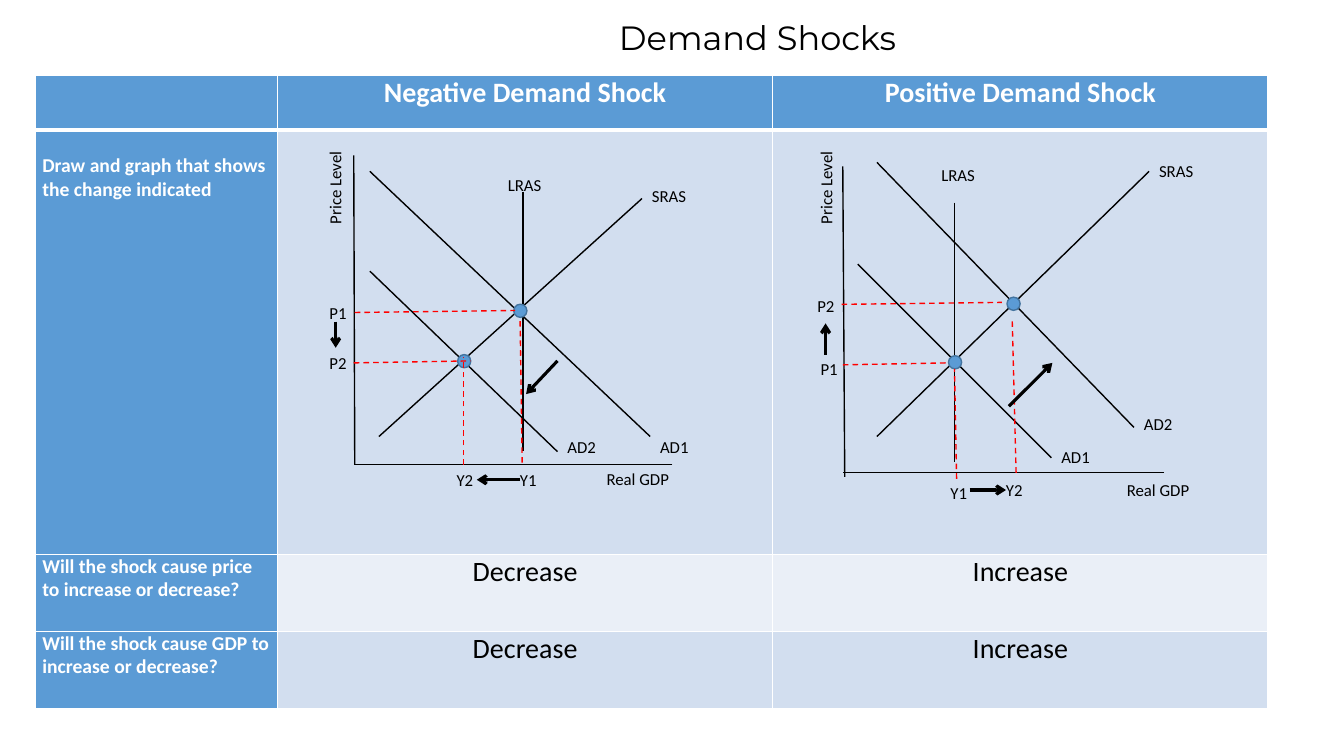
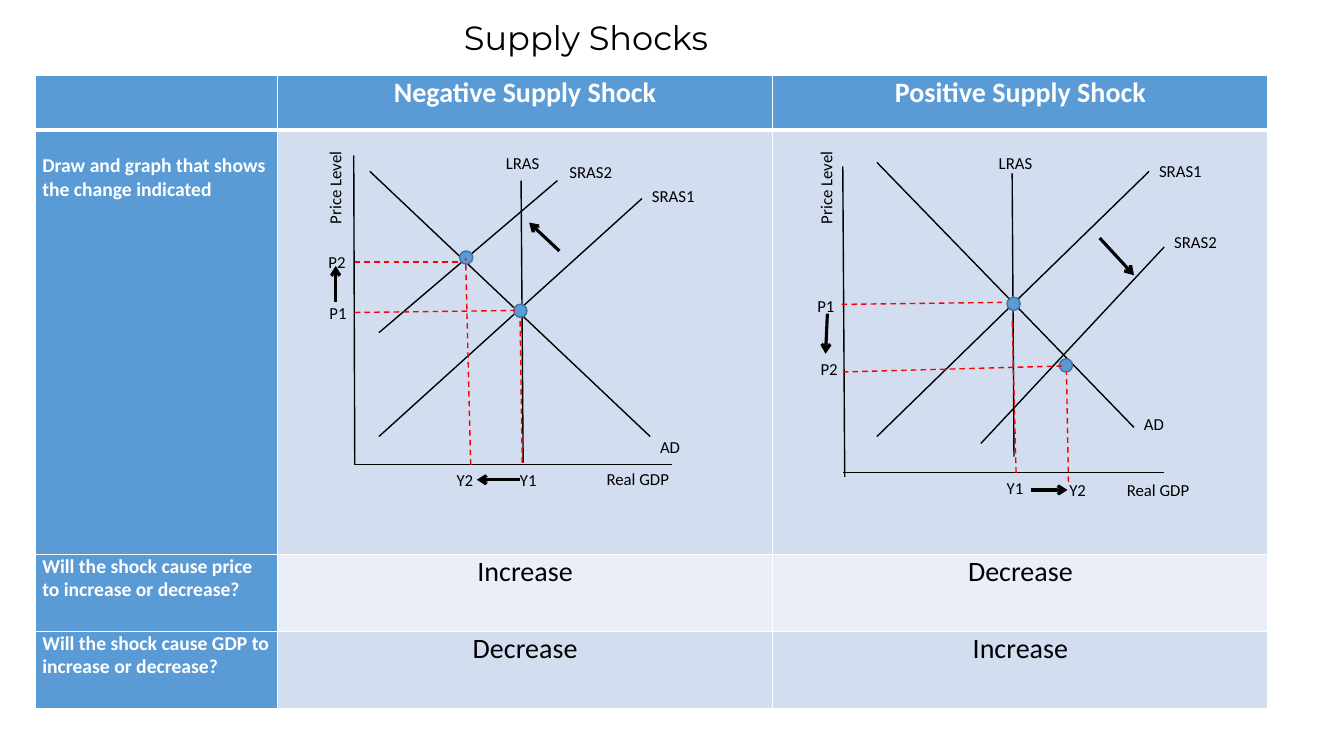
from dataclasses import dataclass

from lxml.etree import SubElement
from pptx import Presentation
from pptx.dml.color import RGBColor
from pptx.enum.dml import MSO_LINE
from pptx.enum.shapes import MSO_CONNECTOR, MSO_SHAPE
from pptx.enum.text import MSO_ANCHOR, MSO_AUTO_SIZE, PP_ALIGN
from pptx.oxml.ns import qn
from pptx.util import Pt

BLACK = RGBColor(0x00, 0x00, 0x00)
WHITE = RGBColor(0xFF, 0xFF, 0xFF)
RED = RGBColor(0xFF, 0x00, 0x00)
BLUE = RGBColor(0x5B, 0x9B, 0xD5)
DARK_BLUE = RGBColor(0x43, 0x73, 0x9E)
PALE = RGBColor(0xD2, 0xDE, 0xEF)
PALER = RGBColor(0xEA, 0xEF, 0xF7)

COLS = (173, 353.8, 353.8)
ROWS = (39, 303, 55, 55)
QUESTIONS = (
    "Draw and graph that shows the change indicated",
    "Will the shock cause price to increase or decrease?",
    "Will the shock cause GDP to increase or decrease?",
)


@dataclass
class Graph:
    lines: list
    dots: list
    guides: list
    arrows: list
    labels: list

    def __add__(self, other):
        return Graph(self.lines + other.lines, self.dots + other.dots,
                     self.guides + other.guides, self.arrows + other.arrows,
                     self.labels + other.labels)


class Deck:
    body_font = "Calibri"
    title_font = "Montserrat"

    def __init__(self):
        self.prs = Presentation()
        self.prs.slide_width, self.prs.slide_height = Pt(960), Pt(540)
        self.s = None

    def format(self, p, size, color=BLACK, bold=False, name=body_font, align=None):
        p.font.size, p.font.name, p.font.bold = Pt(size), name, bold
        p.font.color.rgb = color
        p.alignment = align

    def slide(self, title, x, w):
        self.s = self.prs.slides.add_slide(self.prs.slide_layouts[5])
        sp = self.s.shapes.title
        sp.left, sp.top, sp.width, sp.height = Pt(x), Pt(8.6), Pt(w), Pt(36)
        tf = sp.text_frame
        tf.text = title
        tf.word_wrap = False
        tf.auto_size = MSO_AUTO_SIZE.NONE
        tf.vertical_anchor = MSO_ANCHOR.MIDDLE
        self.format(tf.paragraphs[0], 24, name=self.title_font, align=PP_ALIGN.CENTER)

    def cell(self, cell, text, fill, size, color, bold, align, top, widths):
        cell.margin_left = cell.margin_right = Pt(5)
        cell.margin_top, cell.margin_bottom = Pt(top), Pt(0)
        tc_pr = cell._tc.get_or_add_tcPr()
        for side, width in zip("LRTB", widths):
            ln = SubElement(tc_pr, qn(f"a:ln{side}"), w=str(Pt(width)))
            SubElement(SubElement(ln, qn("a:solidFill")), qn("a:srgbClr"), val=str(WHITE))
        cell.fill.solid()
        cell.fill.fore_color.rgb = fill
        cell.text = text
        self.format(cell.text_frame.paragraphs[0], size, color, bold, align=align)

    def table(self, rows):
        table = self.s.shapes.add_table(len(ROWS), len(COLS), Pt(25.2), Pt(54),
                                        Pt(sum(COLS)), Pt(sum(ROWS))).table
        table.horz_banding = False
        for col, w in zip(table.columns, COLS):
            col.width = Pt(w)
        for i, (row, h) in enumerate(zip(table.rows, ROWS)):
            row.height = Pt(h)
            widths = (1, 1, 3 if i == 1 else 1, 3 if i == 0 else 1)
            for j, text in enumerate(rows[i]):
                head = i == 0 or j == 0
                fill = BLUE if head else PALER if i == 2 else PALE
                size, align = (20, PP_ALIGN.CENTER) if j else (14, PP_ALIGN.LEFT)
                top = 17 if (i, j) == (1, 0) else 0
                self.cell(row.cells[j], text, fill, size, WHITE if head else BLACK,
                          head, align, top, widths)

    def line(self, x1, y1, x2, y2, color=BLACK, width=1, dash=False, arrow=False):
        c = self.s.shapes.add_connector(MSO_CONNECTOR.STRAIGHT, Pt(x1), Pt(y1), Pt(x2), Pt(y2))
        c.line.color.rgb, c.line.width = color, Pt(width)
        if dash:
            c.line.dash_style = MSO_LINE.DASH
        if arrow:
            SubElement(c.line._get_or_add_ln(), qn("a:tailEnd"), type="arrow")
        SubElement(c._element.spPr, qn("a:effectLst"))

    def dot(self, x, y, d=9.4):
        sp = self.s.shapes.add_shape(MSO_SHAPE.OVAL, Pt(x - d / 2), Pt(y - d / 2), Pt(d), Pt(d))
        sp.shadow.inherit = False
        sp.fill.solid()
        sp.fill.fore_color.rgb = BLUE
        sp.line.color.rgb, sp.line.width = DARK_BLUE, Pt(1)

    def label(self, text, x, y, rotation=0):
        w = 34 if len(text) == 2 else 68
        sp = self.s.shapes.add_textbox(Pt(x), Pt(y), Pt(w), Pt(21.6))
        sp.rotation = rotation
        tf = sp.text_frame
        tf.word_wrap = True
        tf.text = text
        self.format(tf.paragraphs[0], 12)

    def graph(self, g):
        for ends in g.lines:
            self.line(*ends)
        for center in g.dots:
            self.dot(*center)
        for ends in g.guides:
            self.line(*ends, color=RED, dash=True)
        for ends in g.arrows:
            self.line(*ends, width=2.25, arrow=True)
        for label in g.labels:
            self.label(*label)


def negative_base(sras, ad):
    return Graph(
        lines=[(252.7, 111, 253.4, 332), (480.2, 332, 253.4, 332),
               (264.2, 122.4, 464.4, 311.8), (458.6, 141.8, 270.7, 311.8)],
        dots=[(371.7, 222)],
        guides=[(253.4, 223.2, 368, 221.8), (373, 330.5, 371.5, 226.8)],
        arrows=[(371.5, 342.7, 340.6, 342.7)],
        labels=[("Real GDP", 426.2, 331.2), ("Price Level", 205.2, 122.4, 270),
                (sras, 458.6, 129), (ad, 464.4, 308.2),
                ("Y1", 364.3, 332), ("Y2", 319, 332), ("P1", 228.2, 212.4)])


def positive_base(sras, ad, upper, lower):
    return Graph(
        lines=[(602, 118.8, 603.4, 340.6), (831.6, 337.7, 602, 337.7),
               (820.8, 122.4, 626.4, 311.8), (626.4, 116, 810, 305.3)],
        dots=[(724, 217)],
        guides=[(601.2, 217.4, 715.7, 216), (725.8, 337.7, 723, 226.8)],
        arrows=[],
        labels=[("Real GDP", 797.8, 339), ("Price Level", 555.8, 122.4, 270),
                (sras, 820.8, 111.6), (ad, 810, 292.3),
                (upper, 576.7, 207.4), (lower, 579, 252.7)])


DEMAND_FALL = Graph(
    lines=[(264.2, 193.7, 398.2, 322.6), (373.7, 136.8, 373.7, 321.8)],
    dots=[(331.6, 258)],
    guides=[(252.7, 259.2, 336.2, 257.8), (331.2, 332, 331.2, 255)],
    arrows=[(398.2, 257.8, 375.8, 281.5), (239.8, 229.7, 239.8, 248.4)],
    labels=[("AD2", 398.2, 308.2), ("P2", 228.2, 248.4), ("LRAS", 355.7, 121)])
DEMAND_RISE = Graph(
    lines=[(612.7, 188.6, 751, 327), (681.8, 144.7, 681.8, 329.8)],
    dots=[(682.2, 258.8)],
    guides=[(602, 260.6, 677.5, 259.2), (683.3, 342, 681.8, 263.5)],
    arrows=[(720.7, 290.2, 751.7, 259.2), (692.6, 350, 718.6, 350),
            (589.7, 253.4, 589.7, 231)],
    labels=[("AD1", 751, 315.4), ("Y1", 671.8, 341.3), ("Y2", 711.4, 339),
            ("LRAS", 665.3, 113.8)])
SUPPLY_FALL = Graph(
    lines=[(270.7, 237.6, 398.2, 129), (372.2, 129, 373.7, 330.5)],
    dots=[(333, 184)],
    guides=[(253.4, 187.2, 329.8, 187.2), (336.2, 332, 332.6, 184.3)],
    arrows=[(399.6, 179.3, 378, 159), (239.8, 216, 239.8, 190)],
    labels=[("SRAS2", 399.6, 112.3), ("P2", 227.5, 176.4), ("LRAS", 354.2, 105.8)])
SUPPLY_RISE = Graph(
    lines=[(700.6, 316.8, 831.6, 176.4), (723, 123.8, 724.3, 326.2)],
    dots=[(761.4, 261)],
    guides=[(602, 265.7, 760.3, 261.4), (763.2, 344.2, 761.8, 265.7)],
    arrows=[(785.5, 170, 810, 196.6), (736.6, 350, 762.5, 350),
            (591, 224, 589.7, 252.7)],
    labels=[("SRAS2", 831.6, 162), ("Y1", 712, 337.7), ("Y2", 756.7, 339),
            ("LRAS", 706.3, 105.8)])

SLIDES = (
    ("Demand", 427.7, 226.8, ("Decrease", "Increase"),
     negative_base("SRAS", "AD1") + DEMAND_FALL,
     positive_base("SRAS", "AD2", "P2", "P1") + DEMAND_RISE),
    ("Supply", 314.6, 208, ("Increase", "Decrease"),
     negative_base("SRAS1", "AD") + SUPPLY_FALL,
     positive_base("SRAS1", "AD", "P1", "P2") + SUPPLY_RISE),
)


def main():
    deck = Deck()
    for kind, x, w, prices, negative, positive in SLIDES:
        deck.slide(f"{kind} Shocks", x, w)
        deck.table((
            ("", f"Negative {kind} Shock", f"Positive {kind} Shock"),
            (QUESTIONS[0], "", ""),
            (QUESTIONS[1], *prices),
            (QUESTIONS[2], "Decrease", "Increase"),
        ))
        deck.graph(negative)
        deck.graph(positive)
    deck.prs.save("out.pptx")


if __name__ == "__main__":
    main()
